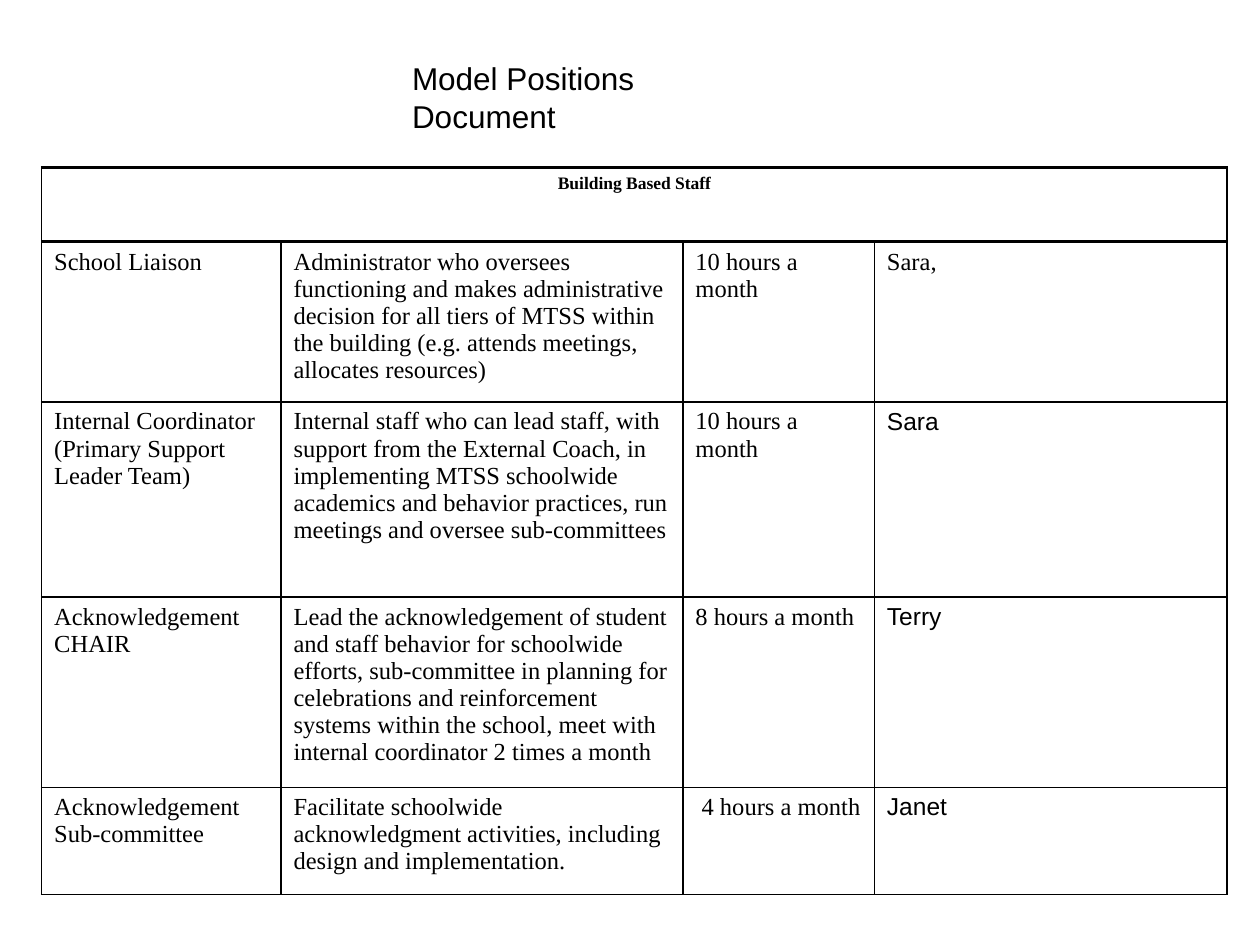
from lxml.etree import SubElement
from pptx import Presentation
from pptx.dml.color import RGBColor
from pptx.enum.text import MSO_ANCHOR, PP_ALIGN
from pptx.oxml.ns import qn
from pptx.util import Inches, Pt

COLORS = {"ink": "000000", "paper": "FFFFFF"}
SERIF, SANS = "Times New Roman", "Arial"


def write(frame, text, size=14, font=SERIF, bold=False, align=PP_ALIGN.LEFT):
    paragraph = frame.paragraphs[0]
    paragraph.alignment = align
    run = paragraph.add_run()
    run.text = text
    run.font.size = Pt(size)
    run.font.name = font
    run.font.bold = bold
    run.font.color.rgb = RGBColor.from_string(COLORS["ink"])


def draw_borders(cell, top=1, bottom=1):
    properties = cell._tc.get_or_add_tcPr()
    for side, width in (("L", 1), ("R", 1), ("T", top), ("B", bottom)):
        line = SubElement(properties, qn(f"a:ln{side}"), w=str(Pt(width)))
        ink = SubElement(line, qn("a:solidFill"))
        SubElement(ink, qn("a:srgbClr"), val=COLORS["ink"])


prs = Presentation()
prs.slide_width, prs.slide_height = Inches(10), Inches(7.5)
slide = prs.slides.add_slide(prs.slide_layouts[5])

heading = slide.shapes.title
heading.left, heading.top = Inches(3.17), Inches(0.42)
heading.width, heading.height = Inches(3.17), Inches(0.4)
heading.text_frame.word_wrap = False
heading.text_frame.vertical_anchor = MSO_ANCHOR.TOP
write(heading.text_frame, "Model Positions Document", size=18, font=SANS)

positions = [
    ("School Liaison",
     "Administrator who oversees functioning and makes administrative decision "
     "for all tiers of MTSS within the building (e.g. attends meetings, "
     "allocates resources)",
     "10 hours a month", "Sara,"),
    ("Internal Coordinator (Primary Support Leader Team)",
     "Internal staff who can lead staff, with support from the External Coach, "
     "in implementing MTSS schoolwide academics and behavior practices, run "
     "meetings and oversee sub-committees",
     "10 hours a month", "Sara"),
    ("Acknowledgement CHAIR",
     "Lead the acknowledgement of student and staff behavior for schoolwide "
     "efforts, sub-committee in planning for celebrations and reinforcement "
     "systems within the school, meet with internal coordinator 2 times a month",
     "8 hours a month", "Terry"),
    ("Acknowledgement Sub-committee",
     "Facilitate schoolwide acknowledgment activities, including design and "
     "implementation.",
     " 4 hours a month", "Janet"),
]
column_widths = [1.9, 3.19, 1.52, 2.8]
row_heights = [0.59, 1.27, 1.55, 1.51, 0.85]

staff = slide.shapes.add_table(
    len(row_heights), len(column_widths), Inches(0.33), Inches(1.33),
    Inches(sum(column_widths)), Inches(sum(row_heights))).table
staff.first_row = staff.horz_banding = False
for column, width in zip(staff.columns, column_widths):
    column.width = Inches(width)
for row, height in zip(staff.rows, row_heights):
    row.height = Inches(height)

banner = staff.cell(0, 0)
banner.merge(staff.cell(0, len(column_widths) - 1))
write(banner.text_frame, "Building Based Staff", size=10, bold=True,
      align=PP_ALIGN.CENTER)

for row_number, position in enumerate(positions, start=1):
    for column_number, entry in enumerate(position):
        is_later_name = column_number == 3 and row_number > 1
        write(staff.cell(row_number, column_number).text_frame, entry,
              font=SANS if is_later_name else SERIF)

for row_number, row in enumerate(staff.rows):
    for cell in row.cells:
        draw_borders(cell, top=2 if row_number < 2 else 1,
                     bottom=2 if row_number == 0 else 1)
        cell.fill.solid()
        cell.fill.fore_color.rgb = RGBColor.from_string(COLORS["paper"])

prs.save("out.pptx")
